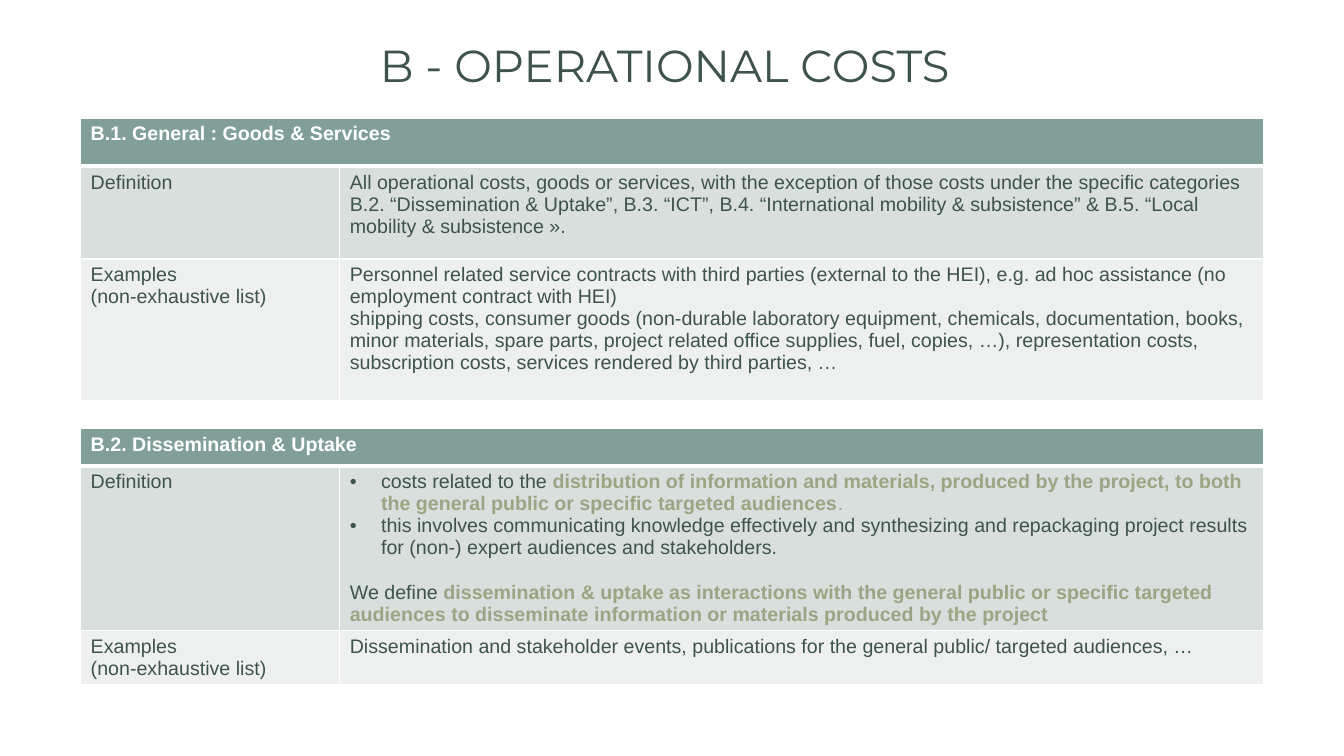
"""Build the operational costs slide with its two cost category tables."""
from lxml.etree import SubElement
from pptx import Presentation
from pptx.dml.color import RGBColor
from pptx.enum.text import MSO_ANCHOR, PP_ALIGN
from pptx.oxml.ns import qn
from pptx.util import Inches, Pt

WHITE, DARK, ACCENT = "FFFFFF", "3E534E", "9DA483"
ROW_FILLS = ["819F98", "D8DFDD", "EDF0EF"]
TITLE = "B - OPERATIONAL COSTS"
LEFT, COLUMNS = 0.8, [2.57, 9.16]
EXAMPLES = [{"text": "Examples"}, {"text": "(non-exhaustive list)"}]
DEFINITION = [{"text": "Definition"}]

TABLES = [
    {
        "top": 1.17,
        "heights": [0.48, 0.92, 1.4],
        "heading": "B.1. General : Goods & Services",
        "rows": [
            (DEFINITION, [{"text": "All operational costs, goods or services, with the exception of those costs "
                           "under the specific categories B.2. “Dissemination & Uptake”, B.3. “ICT”, "
                           "B.4. “International mobility & subsistence” & B.5. “Local mobility & subsistence »."}]),
            (EXAMPLES, [
                {"text": "Personnel related service contracts with third parties (external to the HEI), "
                 "e.g. ad hoc assistance (no employment contract with HEI)"},
                {"text": "shipping costs, consumer goods (non-durable laboratory equipment, chemicals, "
                 "documentation, books, minor materials, spare parts, project related office supplies, fuel, "
                 "copies, …), representation costs, subscription costs, services rendered by third parties, …"},
            ]),
        ],
    },
    {
        "top": 4.25,
        "heights": [0.37, 1.63, 0.54],
        "heading": "B.2. Dissemination & Uptake",
        "rows": [
            (DEFINITION, [
                {"text": "costs related to the ", "bullet": True,
                 "strong": "distribution of information and materials, produced by the project, to both the "
                 "general public or specific targeted audiences", "end": "."},
                {"text": "this involves communicating knowledge effectively and synthesizing and repackaging "
                 "project results for (non-) expert audiences and stakeholders.", "bullet": True},
                {"text": "We define ", "before": 16,
                 "strong": "dissemination & uptake as interactions with the general public or specific targeted "
                 "audiences to disseminate information or materials produced by the project"},
            ]),
            (EXAMPLES, [{"text": "Dissemination and stakeholder events, publications for the general public/ "
                         "targeted audiences, …"}]),
        ],
    },
]


def rgb(value):
    return RGBColor.from_string(value)


def style_font(font, size, name, color, bold=False):
    font.size, font.name, font.bold = Pt(size), name, bold
    font.color.rgb = rgb(color)


def add_bullet(para):
    props = para._p.get_or_add_pPr()
    props.set("marL", str(Inches(0.31)))
    props.set("indent", str(-Inches(0.31)))
    SubElement(props, qn("a:buFont"), typeface="Arial")
    SubElement(props, qn("a:buChar"), char="•")


def style_cell(cell, row):
    props = cell._tc.get_or_add_tcPr()
    widths = {"L": 1, "R": 1, "T": 3 if row == 1 else 1, "B": 3 if row == 0 else 1}
    for side, width in widths.items():
        line = SubElement(props, qn(f"a:ln{side}"), w=str(Pt(width)))
        SubElement(SubElement(line, qn("a:solidFill")), qn("a:srgbClr"), val=WHITE)
    cell.fill.solid()
    cell.fill.fore_color.rgb = rgb(ROW_FILLS[row])


def fill_text(cell, items, color, bold=False):
    frame = cell.text_frame
    for index, item in enumerate(items):
        para = frame.add_paragraph() if index else frame.paragraphs[0]
        para.space_before = Pt(item.get("before", 0))
        if "bullet" in item:
            add_bullet(para)
        style_font(para.font, 14, "Arial", color, bold)
        parts = [("text", color, bold), ("strong", ACCENT, True), ("end", ACCENT, False)]
        for key, shade, weight in parts:
            if key in item:
                span = para.add_run()
                span.text = item[key]
                style_font(span.font, 14, "Arial", shade, weight)


def add_cost_table(page, content):
    heights = content["heights"]
    table = page.shapes.add_table(len(heights), len(COLUMNS), Inches(LEFT), Inches(content["top"]),
                                  Inches(sum(COLUMNS)), Inches(sum(heights))).table
    for column, width in zip(table.columns, COLUMNS):
        column.width = Inches(width)
    for index, height in enumerate(heights):
        table.rows[index].height = Inches(height)
        for cell in table.rows[index].cells:
            style_cell(cell, index)
    table.cell(0, 0).merge(table.cell(0, 1))
    fill_text(table.cell(0, 0), [{"text": content["heading"]}], WHITE, True)
    for index, row in enumerate(content["rows"], 1):
        for column, items in enumerate(row):
            fill_text(table.cell(index, column), items, DARK)


def add_title(page):
    title = page.shapes.title
    title.left, title.top, title.width, title.height = map(Inches, (2.02, 0.38, 9.15, 0.75))
    title.text_frame.text = TITLE
    title.text_frame.vertical_anchor = MSO_ANCHOR.TOP
    para = title.text_frame.paragraphs[0]
    para.alignment, para.line_spacing = PP_ALIGN.CENTER, 0.9
    style_font(para.font, 32, "Montserrat", DARK)


def main():
    deck = Presentation()
    deck.slide_width, deck.slide_height = Inches(13.33), Inches(7.5)
    page = deck.slides.add_slide(deck.slide_layouts[5])
    add_title(page)
    for content in TABLES:
        add_cost_table(page, content)
    deck.save("out.pptx")


if __name__ == "__main__":
    main()
